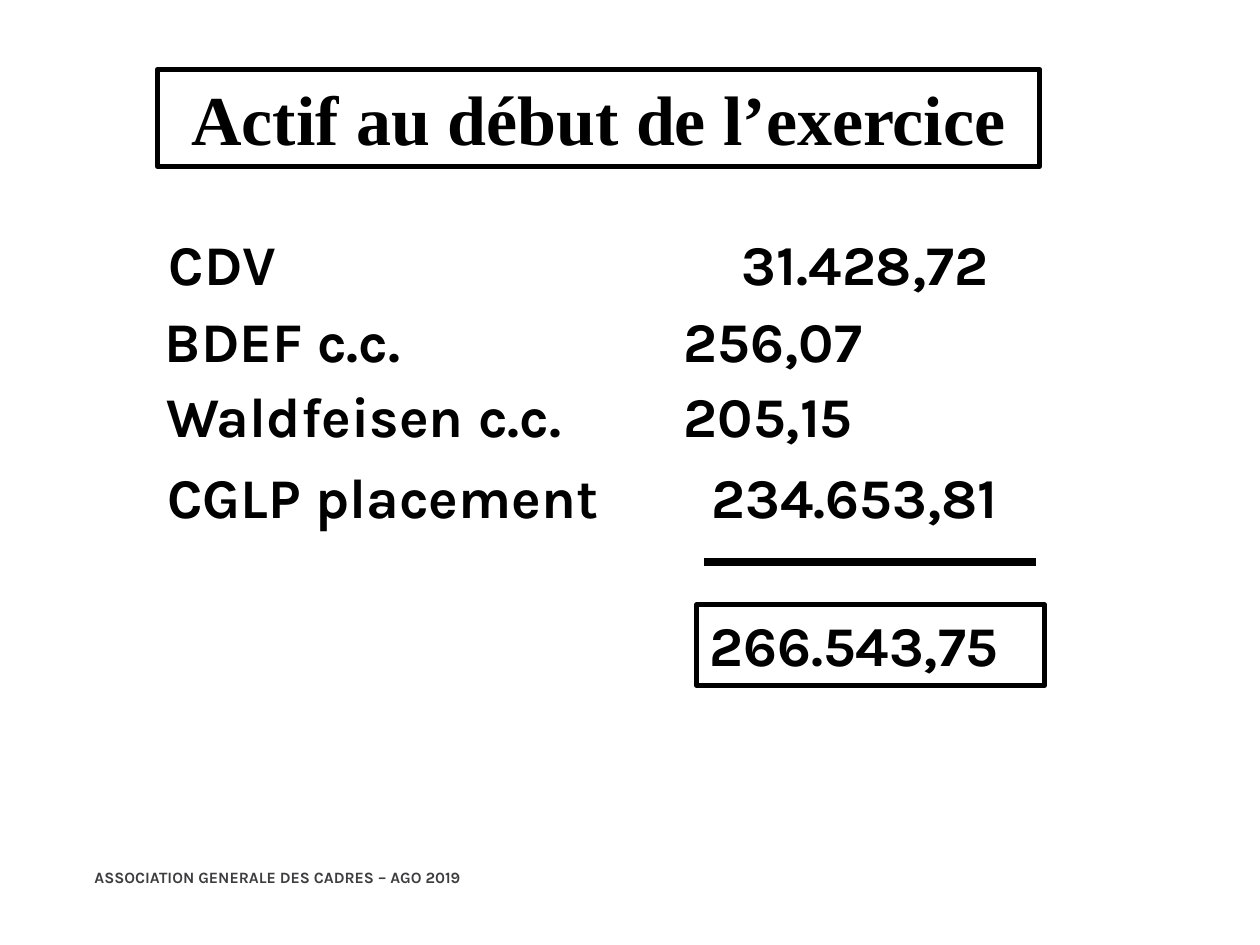
from lxml.etree import SubElement
from pptx import Presentation
from pptx.dml.color import RGBColor
from pptx.enum.shapes import MSO_CONNECTOR as Conn, MSO_SHAPE as Shape
from pptx.enum.text import MSO_ANCHOR as Anchor, PP_ALIGN as Align
from pptx.oxml.ns import qn
from pptx.util import Inches, Pt

COLS, ROWS = 100, 75
INSET = 1
BODY, SERIF = "Karla", "Times New Roman"
BLACK, GREY = "000000", "3E3D40"
ACCOUNTS = [
    ("CDV", "31.428,72", 12.4, 17.7, 58.9),
    ("BDEF c.c.", "256,07", 12.1, 23.8, 54.3),
    ("Waldfeisen c.c.", "205,15", 12.2, 29.8, 54.3),
    ("CGLP placement", "234.653,81", 12.3, 36.2, 56.5),
]

prs = Presentation()
prs.slide_width, prs.slide_height = Inches(10), Inches(7.5)


def color(value):
    """Turn a hex string into a colour."""
    return RGBColor.from_string(value)


def place(box):
    """Turn a box in grid columns and rows into slide lengths."""
    cw, rh = prs.slide_width / COLS, prs.slide_height / ROWS
    return [round(v * unit) for v, unit in zip(box, (cw, rh, cw, rh))]


def write(sp, text, size, font=BODY, fill=BLACK, align=Align.LEFT):
    """Write one bold paragraph into a shape and return it."""
    tf = sp.text_frame
    tf.word_wrap = True
    tf.vertical_anchor = Anchor.TOP
    p = tf.paragraphs[0]
    p.text = text
    p.alignment = align
    for r in p.runs:
        r.font.name, r.font.size, r.font.bold = font, Pt(size), True
        r.font.color.rgb = color(fill)
    return p


def add_frame(s, box, text, size, **style):
    """Add an outlined box with text."""
    sp = s.shapes.add_shape(Shape.RECTANGLE, *place(box))
    sp.shadow.inherit = False
    sp.fill.background()
    sp.line.color.rgb = color(BLACK)
    sp.line.width = Pt(3)
    write(sp, text, size, **style)


def add_account(s, box, label, amount, amount_col):
    """Add an account label with its amount at a tab stop."""
    sp = s.shapes.add_textbox(*place(box))
    p = write(sp, f"{label}\t{amount}", 32)
    tabs = SubElement(p._p.get_or_add_pPr(), qn("a:tabLst"))
    offset = place((amount_col - box[0] - INSET, 0, 0, 0))[0]
    SubElement(tabs, qn("a:tab"), pos=str(offset), algn="l")


def add_rule(s, box):
    """Add the thick line above the total."""
    x, y, w, h = place(box)
    line = s.shapes.add_connector(Conn.STRAIGHT, x, y, x + w, y + h)
    line.line.color.rgb = color(BLACK)
    line.line.width = Pt(4.5)
    SubElement(line._element.spPr, qn("a:effectLst"))


def add_footer(s, box, text):
    """Add the footer without inner margins."""
    sp = s.shapes.add_textbox(*place(box))
    tf = sp.text_frame
    tf.margin_left = tf.margin_right = tf.margin_top = tf.margin_bottom = 0
    write(sp, text, 9, fill=GREY)


def main():
    """Build the slide and save it."""
    s = prs.slides.add_slide(prs.slide_layouts[6])
    add_footer(s, (7.5, 68.9, 59, 4), "ASSOCIATION GENERALE DES CADRES – AGO 2019")
    add_frame(s, (12.5, 5.5, 70, 7.7), "Actif au début de l’exercice", 40,
              font=SERIF, align=Align.CENTER)
    for label, amount, col, row, amount_col in ACCOUNTS:
        add_account(s, (col, row, 71.5, 6.4), label, amount, amount_col)
    add_rule(s, (55.9, 44.6, 26.3, 0))
    add_frame(s, (55.3, 48, 27.6, 6.4), "266.543,75", 32)
    prs.save("out.pptx")


if __name__ == "__main__":
    main()
